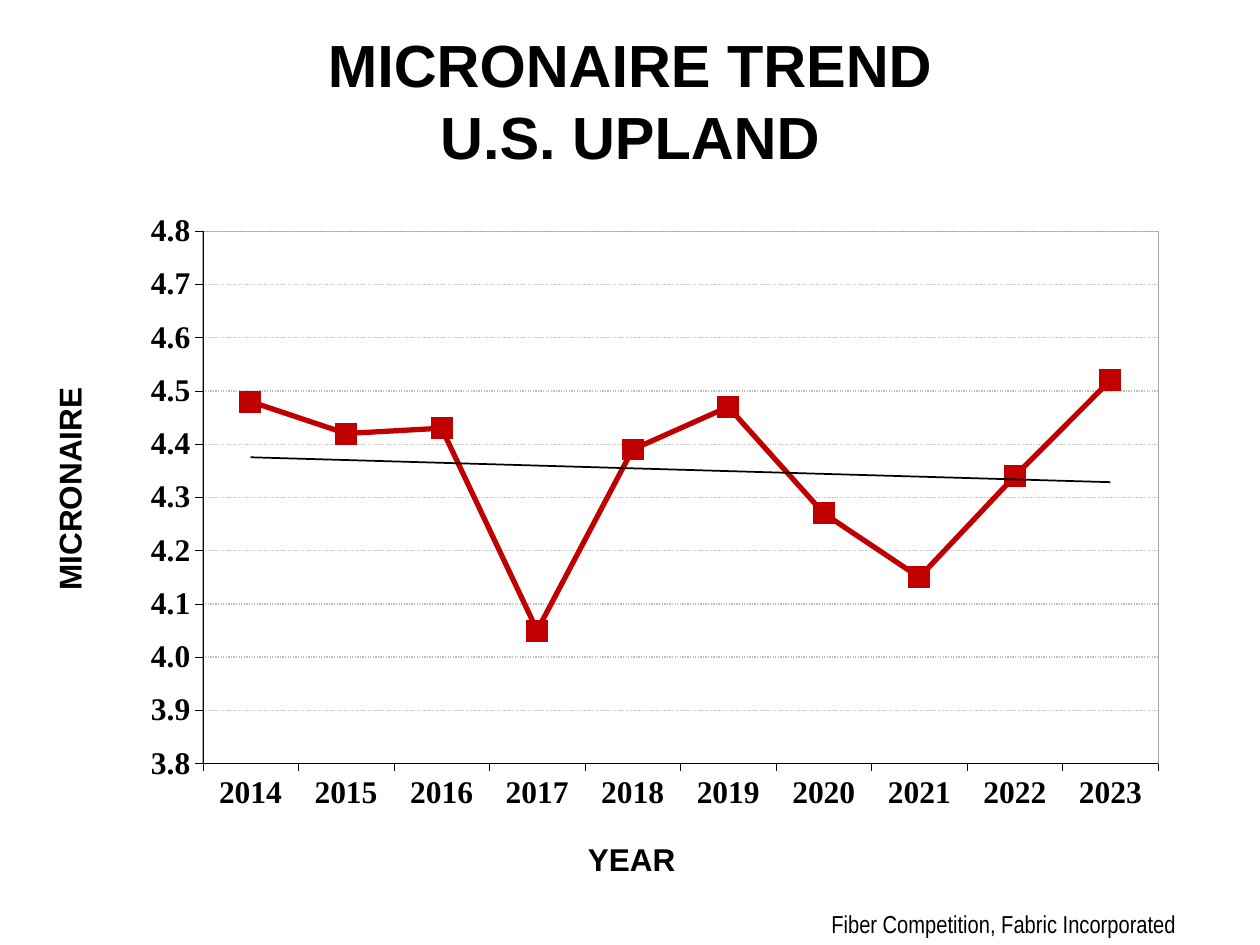
from lxml import etree
from pptx import Presentation
from pptx.chart.data import CategoryChartData
from pptx.dml.color import RGBColor
from pptx.enum.chart import XL_CHART_TYPE as ChartType, XL_MARKER_STYLE as Marker, XL_TICK_MARK as Tick
from pptx.enum.dml import MSO_LINE as Dash
from pptx.enum.text import MSO_ANCHOR as Anchor, MSO_AUTO_SIZE as AutoSize, PP_ALIGN as Align
from pptx.oxml import parse_xml
from pptx.oxml.ns import nsdecls, qn
from pptx.util import Pt

# Content
TITLE = ["MICRONAIRE TREND", "U.S. UPLAND"]
MICRONAIRE = {
    "2014": 4.48, "2015": 4.42, "2016": 4.43, "2017": 4.05, "2018": 4.39,
    "2019": 4.47, "2020": 4.27, "2021": 4.15, "2022": 4.34, "2023": 4.52,
}
# Text, (left, top, width, height), rotation
AXIS_TITLES = [
    ("MICRONAIRE", (-18.5, 268.6, 116, 21.6), 270),
    ("YEAR", (336, 480, 50, 21.6), 0),
]
CREDIT = "Fiber Competition, Fabric Incorporated"


class Theme:
    ink = RGBColor(0, 0, 0)
    series = RGBColor(0xC0, 0, 0)
    grid = RGBColor(0xBF, 0xBF, 0xBF)
    frame, shadow = "A6A6A6", "808080"
    font, narrow, serif = "Arial", "Arial Narrow", "Times New Roman"
    title, label, credit = 34, 18, 14


def format_font(font, name, size, bold=False):
    font.name, font.size, font.bold = name, Pt(size), bold
    font.color.rgb = Theme.ink


def write(frame, text, name=Theme.font, size=Theme.label, bold=False,
          align=Align.LEFT, anchor=Anchor.TOP, wrap=True, tight=False):
    """Fill a text frame with one paragraph, formatted alike throughout."""
    frame.word_wrap = wrap
    frame.auto_size = AutoSize.SHAPE_TO_FIT_TEXT if tight else AutoSize.NONE
    frame.vertical_anchor = anchor
    if tight:
        frame.margin_left = frame.margin_top = frame.margin_right = frame.margin_bottom = 0
    para = frame.paragraphs[0]
    para.alignment = align
    for index, line in enumerate(text.split("\n")):
        if index:
            para.add_line_break()
        span = para.add_run()
        span.text = line
        format_font(span.font, name, size, bold)
    return para


def add_text_shadow(para):
    for span in para.runs:
        span.font.fill._xPr.find(qn("a:solidFill")).addnext(parse_xml(
            f'<a:effectLst {nsdecls("a")}><a:outerShdw dist="38100" dir="2700000" algn="tl">'
            f'<a:srgbClr val="{Theme.shadow}"/></a:outerShdw></a:effectLst>'))


def set_plot_area(chart, **bounds):
    """Fix the inner plot area, as fractions of the chart, and frame it."""
    plot_area = chart._chartSpace.chart.plotArea
    for old in plot_area.findall(qn("c:layout")):
        plot_area.remove(old)
    layout = parse_xml(f'<c:layout {nsdecls("c")}><c:manualLayout/></c:layout>')
    settings = {"layoutTarget": "inner", "xMode": "edge", "yMode": "edge", **bounds}
    for tag, value in settings.items():
        etree.SubElement(layout[0], qn(f"c:{tag}")).set("val", str(value))
    plot_area.insert(0, layout)
    plot_area.append(parse_xml(
        f'<c:spPr {nsdecls("c", "a")}><a:noFill/><a:ln w="9525"><a:solidFill>'
        f'<a:srgbClr val="{Theme.frame}"/></a:solidFill></a:ln></c:spPr>'))


def add_trend_line(series):
    series._element.find(qn("c:cat")).addprevious(parse_xml(
        f'<c:trendline {nsdecls("c", "a")}><c:spPr><a:ln w="12700"><a:solidFill>'
        f'<a:srgbClr val="{Theme.ink}"/></a:solidFill></a:ln></c:spPr>'
        '<c:trendlineType val="linear"/><c:dispRSqr val="0"/><c:dispEq val="0"/></c:trendline>'))


def add_trend_chart(page):
    data = CategoryChartData(number_format="0.00")
    data.categories = list(MICRONAIRE)
    data.add_series("Series 1", list(MICRONAIRE.values()))
    chart = page.shapes.add_chart(
        ChartType.LINE_MARKERS, Pt(20), Pt(23), Pt(680), Pt(494), data).chart
    chart.has_title = chart.has_legend = False
    format_font(chart.font, Theme.serif, 10)
    chart.plots[0].vary_by_categories = False
    set_plot_area(chart, x=0.141, y=0.221, w=0.803, h=0.616)

    # Axes
    years, values = chart.category_axis, chart.value_axis
    for axis in (years, values):
        axis.major_tick_mark, axis.minor_tick_mark = Tick.OUTSIDE, Tick.NONE
        axis.format.line.color.rgb = Theme.ink
        axis.format.line.width = Pt(0.25)
        format_font(axis.tick_labels.font, Theme.serif, Theme.label, bold=True)
    years.has_major_gridlines = False
    values.minimum_scale, values.maximum_scale, values.major_unit = 3.8, 4.8, 0.1
    values.tick_labels.number_format = "0.0"
    values.tick_labels.number_format_is_linked = False
    values.has_major_gridlines = True
    grid = values.major_gridlines.format.line
    grid.color.rgb, grid.width, grid.dash_style = Theme.grid, Pt(0.75), Dash.ROUND_DOT

    # Series
    series = chart.plots[0].series[0]
    series.smooth = False
    series.format.line.color.rgb = Theme.series
    series.format.line.width = Pt(3)
    marker = series.marker
    marker.style, marker.size = Marker.SQUARE, 12
    marker.format.fill.solid()
    marker.format.fill.fore_color.rgb = Theme.series
    marker.format.line.color.rgb = Theme.series
    add_trend_line(series)


def main():
    deck = Presentation()
    deck.slide_width, deck.slide_height = Pt(720), Pt(540)
    page = deck.slides.add_slide(deck.slide_layouts[5])

    # Title
    title = page.shapes.title
    title.left, title.top, title.width, title.height = map(Pt, (54, 12, 612, 90))
    add_text_shadow(write(title.text_frame, "\n".join(TITLE), size=Theme.title, bold=True,
                          align=Align.CENTER, anchor=Anchor.MIDDLE))

    # Axis titles and credit
    for text, place, rotation in AXIS_TITLES:
        box = page.shapes.add_textbox(*map(Pt, place))
        box.rotation = rotation
        write(box.text_frame, text, bold=True, wrap=False, tight=True)
    box = page.shapes.add_textbox(Pt(468), Pt(516), Pt(252), Pt(24))
    write(box.text_frame, CREDIT, name=Theme.narrow, size=Theme.credit)

    add_trend_chart(page)
    deck.save("out.pptx")


if __name__ == "__main__":
    main()
